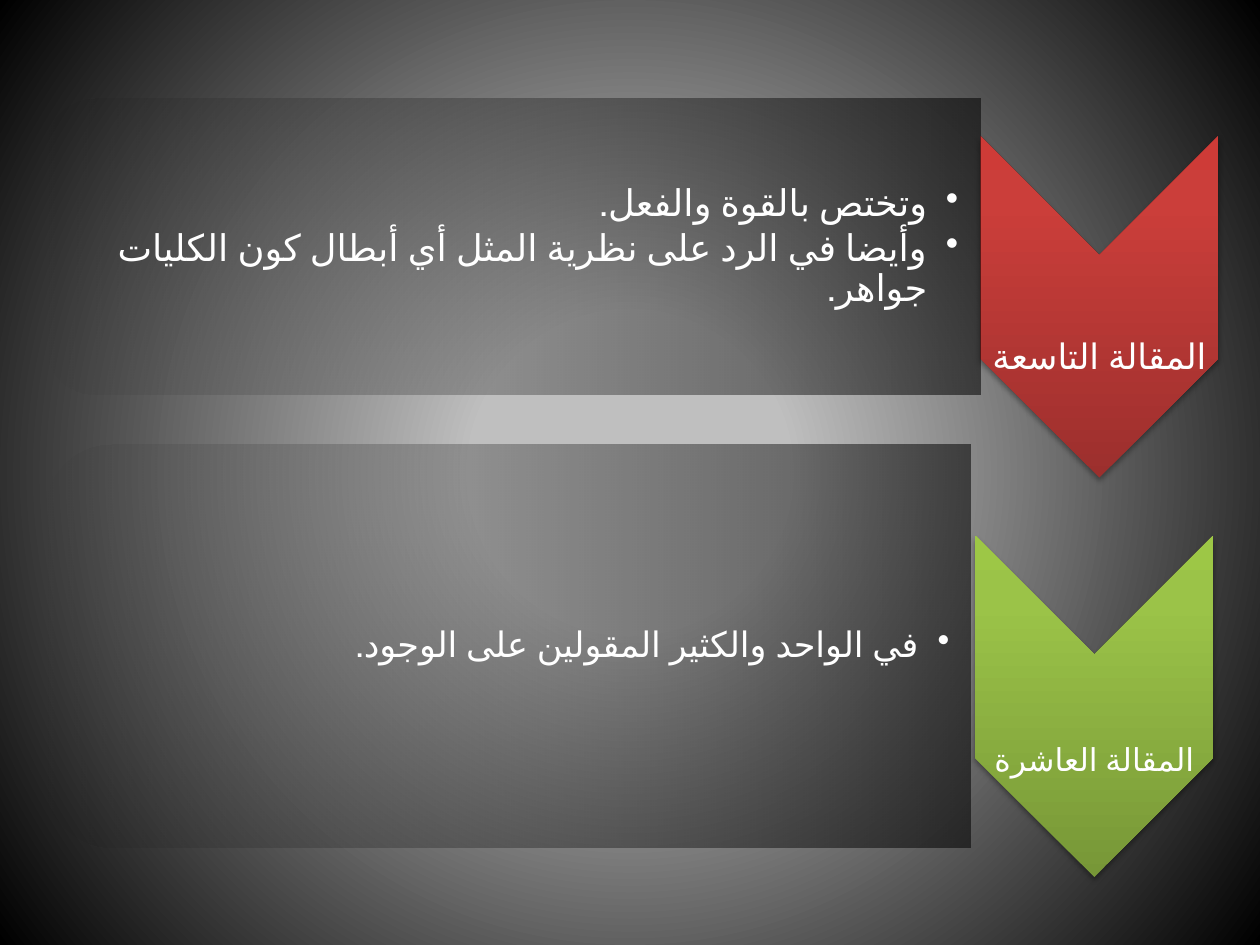
"""Builds a slide of two chevrons, each with a panel of right-to-left bullets."""
from lxml import etree
from pptx import Presentation
from pptx.dml.color import RGBColor
from pptx.enum.shapes import MSO_SHAPE
from pptx.enum.text import MSO_ANCHOR, PP_ALIGN
from pptx.oxml.ns import qn
from pptx.util import Inches, Pt

THEME = {
    "font": "Roboto",
    "language": "ar-SA",
    "text": "FFFFFF",
    "background": [(0, "BFBFBF", 100), (20, "BFBFBF", 100), (100, "000000", 100)],
    "panel": [(0, "000000", 0), (100, "000000", 55)],
    "red": [(0, "9C2F2D", 100), (80, "CB3E3A", 100), (100, "CE3B37", 100)],
    "green": [(0, "779737", 100), (80, "9BC348", 100), (100, "9DC746", 100)],
}

ARTICLES = [
    {"label": "المقالة التاسعة", "label_size": 20, "fill": "red",
     "chevron": (7.78, 1.08, 1.89, 2.71), "panel": (0.36, 0.78, 7.42, 2.35),
     "body": (0.47, 0.9, 7.3, 2.12), "body_size": 21, "body_after": 3,
     "align": PP_ALIGN.RIGHT,
     "points": ["وتختص بالقوة والفعل.",
                "وأيضا في الرد على نظرية المثل أي أبطال كون الكليات جواهر."]},
    {"label": "المقالة العاشرة", "label_size": 18, "fill": "green",
     "chevron": (7.74, 4.25, 1.89, 2.71), "panel": (0.35, 3.53, 7.35, 3.2),
     "body": (0.51, 3.69, 7.19, 2.88), "body_size": 20, "body_after": 0,
     "align": PP_ALIGN.JUSTIFY,
     "points": ["في الواحد والكثير المقولين على الوجود."]},
]


def add(parent, tag, **attrs):
    return etree.SubElement(parent, qn(tag), {k: str(v) for k, v in attrs.items()})


def set_gradient(fill, props, stops, angle=None, rotate=1):
    fill.solid()
    old = props.find(qn("a:solidFill"))
    grad = etree.Element(qn("a:gradFill"), rotWithShape=str(rotate))
    stop_list = add(grad, "a:gsLst")
    for pos, color, opacity in stops:
        clr = add(add(stop_list, "a:gs", pos=pos * 1000), "a:srgbClr", val=color)
        if opacity < 100:
            add(clr, "a:alpha", val=opacity * 1000)
    if angle is None:
        add(add(grad, "a:path", path="circle"), "a:fillToRect",
            l=50000, t=50000, r=50000, b=50000)
    else:
        add(grad, "a:lin", ang=angle * 60000, scaled=0)
    props.replace(old, grad)


def add_turned(s, kind, box, rotation, stops, angle, rotate):
    x, y, w, h = box
    sp = s.shapes.add_shape(kind, Inches(x + (w - h) / 2), Inches(y + (h - w) / 2),
                            Inches(h), Inches(w))
    sp.rotation = rotation
    set_gradient(sp.fill, sp._element.spPr, stops, angle, rotate)
    sp.line.fill.background()
    sp.shadow.inherit = False
    return sp


def add_shadow(sp):
    effects = sp._element.spPr.find(qn("a:effectLst"))
    shadow = add(effects, "a:outerShdw", blurRad=Pt(3.1), dist=Pt(1.8),
                 dir=90 * 60000, rotWithShape=0)
    add(add(shadow, "a:srgbClr", val="000000"), "a:alpha", val=35000)


def add_text(s, texts, box, *, size, align, anchor, insets, after=0, bullet=False):
    tf = s.shapes.add_textbox(*map(Inches, box)).text_frame
    tf.word_wrap = True
    tf.vertical_anchor = anchor
    tf.margin_left, tf.margin_top, tf.margin_right, tf.margin_bottom = map(Inches, insets)
    for i, text in enumerate(texts):
        p = tf.add_paragraph() if i else tf.paragraphs[0]
        p.alignment = align
        p.line_spacing = 0.9
        p.space_after = Pt(after)
        props = p._p.get_or_add_pPr()
        props.set("rtl", "1")
        if bullet:
            p.level = 1
            props.set("marL", str(Inches(0.25)))
            props.set("indent", str(Inches(-0.25)))
            add(props, "a:buChar", char="•")
        r = p.add_run()
        r.text = text
        r.font.size = Pt(size)
        r.font.name = THEME["font"]
        r.font.color.rgb = RGBColor.from_string(THEME["text"])
        r._r.get_or_add_rPr().set("lang", THEME["language"])


def main():
    prs = Presentation()
    prs.slide_width, prs.slide_height = Inches(10), Inches(7.5)
    s = prs.slides.add_slide(prs.slide_layouts[6])
    fill = s.background.fill
    set_gradient(fill, s._element.cSld.find(qn("p:bg")).find(qn("p:bgPr")),
                 THEME["background"])
    for article in ARTICLES:
        x, y, w, h = article["chevron"]
        chevron = add_turned(s, MSO_SHAPE.CHEVRON, article["chevron"], 90,
                             THEME[article["fill"]], 270, 0)
        add_shadow(chevron)
        add_text(s, [article["label"]], (x, y + w / 2, w, h - w),
                 size=article["label_size"], align=PP_ALIGN.CENTER,
                 anchor=MSO_ANCHOR.BOTTOM, insets=(0, 0.6, 0, 0),
                 after=article["label_size"] * 0.35)
        add_turned(s, MSO_SHAPE.ROUND_2_SAME_RECTANGLE, article["panel"], 270,
                   THEME["panel"], 90, 1)
        add_text(s, article["points"], article["body"], size=article["body_size"],
                 align=article["align"], anchor=MSO_ANCHOR.MIDDLE,
                 insets=(0.01, 0.01, 0.16, 0.01), after=article["body_after"],
                 bullet=True)
    prs.save("out.pptx")


if __name__ == "__main__":
    main()
